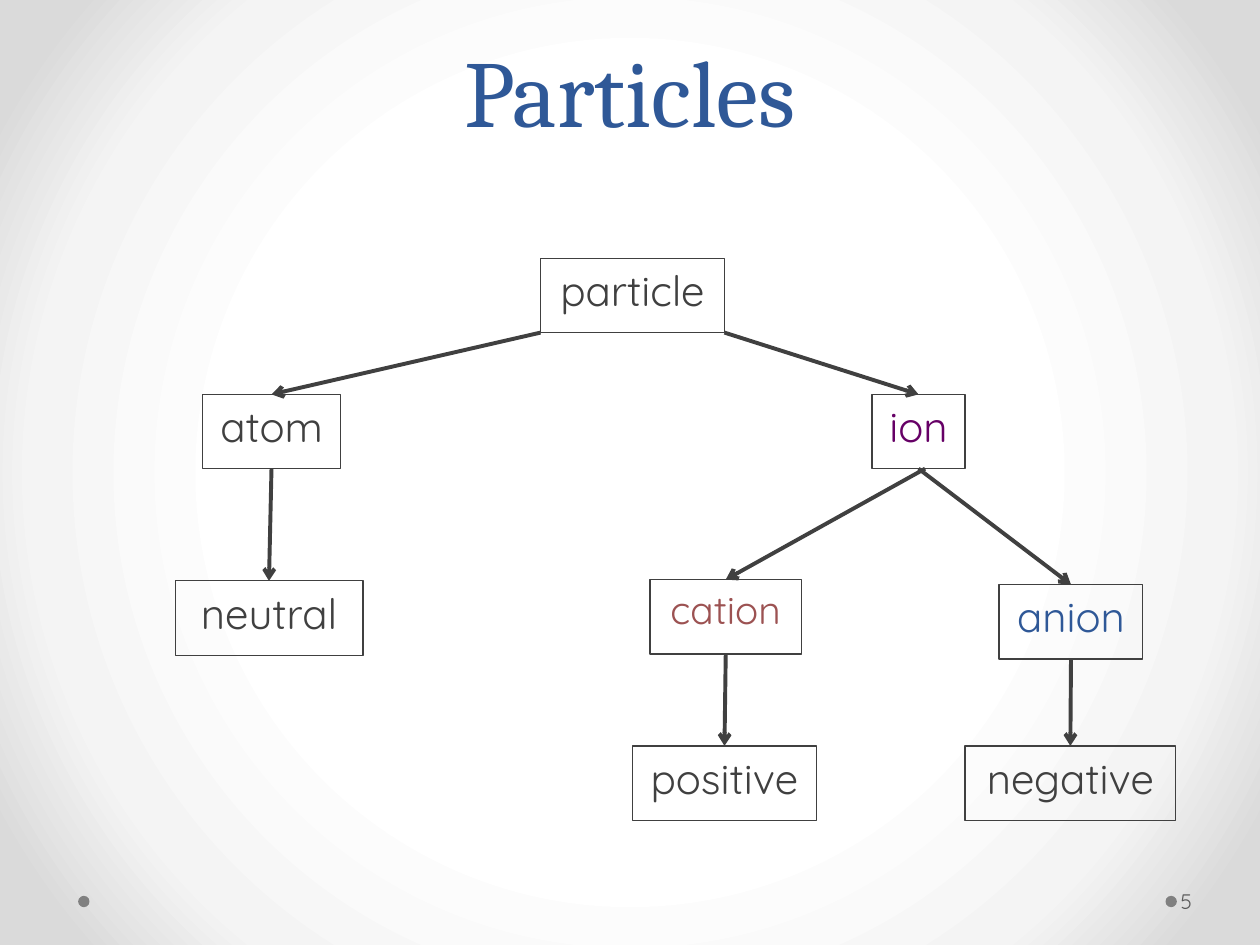
"""Build the Particles slide: a tree that sorts particles by charge."""
import lxml.etree
import pptx
import pptx.dml.color
import pptx.enum.shapes
import pptx.enum.text
import pptx.oxml
import pptx.oxml.ns
import pptx.util

Inches = pptx.util.Inches
Anchor = pptx.enum.text.MSO_ANCHOR
Align = pptx.enum.text.PP_ALIGN
Preset = pptx.enum.shapes.MSO_SHAPE

THEME = {
    "dark": "404040", "blue": "2F5897", "purple": "660066", "red": "9C5252",
    "dot": "808080", "page": "595959",
    "heading_font": "Cambria", "body_font": "Quicksand",
    "title_size": 54, "title_leading": 58, "node_size": 24, "cation_size": 22.2, "page_size": 12,
    "border": 0.75, "arrow": 2.25,
    "backdrop": [(50, "FFFFFF"), (76, "F4F4F4"), (92, "DADADA")],
}
NODE_HEIGHT = 0.59
NODES = {
    "particle": (4.29, 2.05, 1.46, "dark", "node_size"),
    "ion": (6.92, 3.13, 0.74, "purple", "node_size"),
    "atom": (1.61, 3.13, 1.09, "dark", "node_size"),
    "neutral": (1.39, 4.61, 1.49, "dark", "node_size"),
    "cation": (5.16, 4.6, 1.2, "red", "cation_size"),
    "anion": (7.93, 4.64, 1.14, "blue", "node_size"),
    "negative": (7.66, 5.92, 1.67, "dark", "node_size"),
    "positive": (5.02, 5.92, 1.46, "dark", "node_size"),
}
BRANCHES = [
    ("particle", 0, "atom"), ("atom", 0.5, "neutral"), ("particle", 1, "ion"),
    ("ion", 0.5, "anion"), ("ion", 0.57, "cation"),
    ("cation", 0.5, "positive"), ("anion", 0.5, "negative"),
]
DOTS = [(9.25, 7.11), (0.62, 7.11)]
DOT_SIZE = 0.09


def color(name):
    return pptx.dml.color.RGBColor.from_string(THEME[name])


def apply(target, values):
    for name, value in values.items():
        setattr(target, name, value)


def paint_background(slide):
    slide.background.fill.gradient()
    gradient = next(slide.element.iter(pptx.oxml.ns.qn("a:gradFill")))
    stops = "".join(
        f'<a:gs pos="{position * 1000}"><a:srgbClr val="{shade}"/></a:gs>'
        for position, shade in THEME["backdrop"])
    replacement = pptx.oxml.parse_xml(
        f'<a:gradFill {pptx.oxml.ns.nsdecls("a")} rotWithShape="1"><a:gsLst>{stops}</a:gsLst>'
        '<a:path path="circle"><a:fillToRect l="50000" t="50000" r="50000" b="50000"/></a:path>'
        '</a:gradFill>')
    gradient.getparent().replace(gradient, replacement)


def write(shape, text, font, size, ink, align=Align.CENTER, leading=None, **frame):
    apply(shape.text_frame, {"word_wrap": True, "vertical_anchor": Anchor.TOP, **frame})
    paragraph = shape.text_frame.paragraphs[0]
    apply(paragraph, {"alignment": align, "line_spacing": leading})
    run = paragraph.add_run()
    run.text = text
    apply(run.font, {"name": THEME[font], "size": pptx.util.Pt(THEME[size])})
    run.font.color.rgb = color(ink)


def add_dot(slide, left, top):
    dot = slide.shapes.add_shape(
        Preset.OVAL, Inches(left), Inches(top), Inches(DOT_SIZE), Inches(DOT_SIZE))
    dot.shadow.inherit = False
    dot.fill.solid()
    dot.fill.fore_color.rgb = color("dot")
    dot.line.fill.background()


def add_node(slide, label, left, top, width, ink, size):
    node = slide.shapes.add_shape(
        Preset.RECTANGLE, Inches(left), Inches(top), Inches(width), Inches(NODE_HEIGHT))
    node.shadow.inherit = False
    node.fill.background()
    node.line.color.rgb = color("dark")
    node.line.width = pptx.util.Pt(THEME["border"])
    write(node, label, "body_font", size, ink)


def add_branch(slide, parent, fraction, child):
    left, top, width = NODES[parent][:3]
    child_left, child_top, child_width = NODES[child][:3]
    ends = (left + width * fraction, top + NODE_HEIGHT, child_left + child_width / 2, child_top)
    arrow = slide.shapes.add_connector(
        pptx.enum.shapes.MSO_CONNECTOR.STRAIGHT, *map(Inches, ends))
    arrow.line.color.rgb = color("dark")
    arrow.line.width = pptx.util.Pt(THEME["arrow"])
    qn = pptx.oxml.ns.qn
    properties = arrow.element.find(qn("p:spPr"))
    lxml.etree.SubElement(properties.find(qn("a:ln")), qn("a:tailEnd"), type="arrow")
    lxml.etree.SubElement(properties, qn("a:effectLst"))


def main():
    presentation = pptx.Presentation()
    apply(presentation, {"slide_width": Inches(10), "slide_height": Inches(7.5)})
    slide = presentation.slides.add_slide(presentation.slide_layouts[6])
    paint_background(slide)
    for left, top in DOTS:
        add_dot(slide, left, top)
    title = slide.shapes.add_textbox(Inches(0.5), Inches(0), Inches(9), Inches(1.21))
    write(title, "Particles", "heading_font", "title_size", "blue",
          leading=pptx.util.Pt(THEME["title_leading"]), vertical_anchor=Anchor.BOTTOM)
    for label, place in NODES.items():
        add_node(slide, label, *place)
    for branch in BRANCHES:
        add_branch(slide, *branch)
    page = slide.shapes.add_textbox(Inches(9.34), Inches(6.95), Inches(0.61), Inches(0.4))
    write(page, "5", "body_font", "page_size", "page", Align.LEFT,
          vertical_anchor=Anchor.MIDDLE, margin_left=Inches(0.03), margin_right=Inches(0.05))
    presentation.save("out.pptx")


if __name__ == "__main__":
    main()
